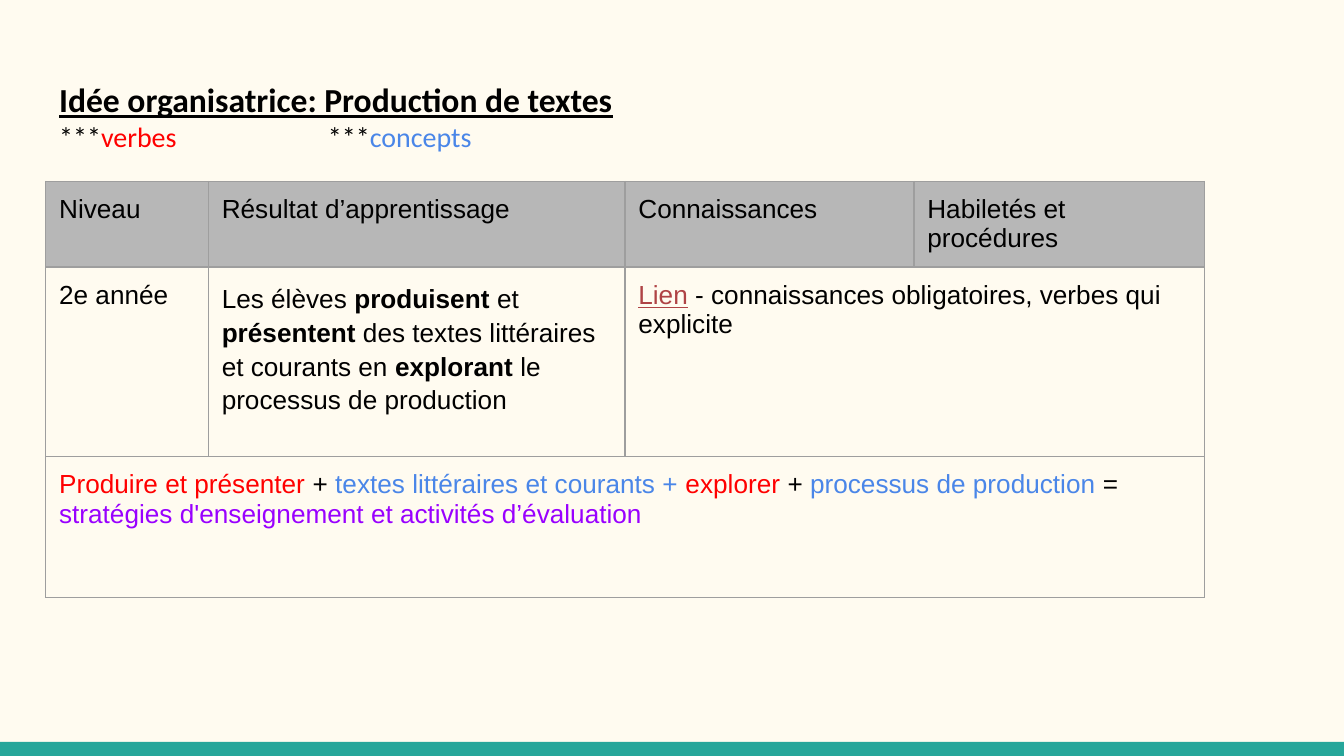
from lxml import etree
from pptx import Presentation
from pptx import util as u
from pptx.dml import color
from pptx.enum import shapes, text
from pptx.oxml import ns

BLACK, RED, BLUE, PURPLE = "000000", "FF0000", "4A86E8", "9900FF"
LINK, GREY, TEAL, CREAM, BORDER = "AF4345", "B7B7B7", "26A69A", "FFFBF0", "9E9E9E"
COLUMN_WIDTHS = [1.21, 3.1, 2.15, 2.16]
ROW_HEIGHTS = [0.54, 1.41, 1.05]
HEADERS = ["Niveau", "Résultat d’apprentissage", "Connaissances", "Habiletés et procédures"]
OUTCOME = [
    ("Les élèves ", False),
    ("produisent", True),
    (" et ", False),
    ("présentent", True),
    (" des textes littéraires et courants en ", False),
    ("explorant", True),
    (" le processus de production", False),
]
SUMMARY = [
    ("Produire et présenter", RED),
    (" + ", BLACK),
    ("textes littéraires et courants +", BLUE),
    (" explorer ", RED),
    ("+ ", BLACK),
    ("processus de production", BLUE),
    (" = ", BLACK),
    ("stratégies d'enseignement et activités d’évaluation", PURPLE),
]


def rgb(value):
    return color.RGBColor.from_string(value)


def paint(fill, value):
    fill.solid()
    fill.fore_color.rgb = rgb(value)


def add_text(paragraph, content, size=14, font="Arial", ink=BLACK, bold=False, underline=False):
    run = paragraph.add_run()
    run.text = content
    run.font.size = u.Pt(size)
    run.font.name = font
    run.font.color.rgb = rgb(ink)
    run.font.bold = bold
    run.font.underline = underline


def set_borders(cell):
    properties = cell._tc.get_or_add_tcPr()
    for position, side in enumerate(("lnL", "lnR", "lnT", "lnB")):
        line = etree.Element(ns.qn(f"a:{side}"), w=str(u.Pt(0.75)))
        fill = etree.SubElement(line, ns.qn("a:solidFill"))
        etree.SubElement(fill, ns.qn("a:srgbClr"), val=BORDER)
        properties.insert(position, line)


def format_cell(cell, fill):
    cell.margin_left = cell.margin_right = u.Inches(0.1)
    cell.margin_top = cell.margin_bottom = u.Inches(0.1)
    if fill:
        paint(cell.fill, fill)
    else:
        cell.fill.background()
    set_borders(cell)


def add_band(slide):
    band = slide.shapes.add_shape(
        shapes.MSO_SHAPE.RECTANGLE, 0, u.Inches(5.52), u.Inches(10), u.Inches(0.11))
    band.shadow.inherit = False
    paint(band.fill, TEAL)
    band.line.fill.background()


def fill_title(slide):
    title = slide.shapes.title
    title.left, title.top = u.Inches(0.34), u.Inches(0.49)
    title.width, title.height = u.Inches(9.32), u.Inches(0.67)
    frame = title.text_frame
    frame.word_wrap = True
    frame.auto_size = text.MSO_AUTO_SIZE.NONE
    frame.vertical_anchor = text.MSO_ANCHOR.TOP
    frame.margin_left = frame.margin_right = u.Inches(0.1)
    frame.margin_top = frame.margin_bottom = u.Inches(0.1)
    heading, legend = frame.paragraphs[0], frame.add_paragraph()
    for paragraph in (heading, legend):
        paragraph.alignment = text.PP_ALIGN.LEFT
        paragraph.line_spacing = 1.0
        paragraph.space_before = paragraph.space_after = u.Pt(0)
    add_text(heading, "Idée organisatrice: Production de textes",
             size=18, font="Calibri", bold=True, underline=True)
    for content, ink in (("***", BLACK), ("verbes", RED), ("\t\t***", BLACK), ("concepts", BLUE)):
        add_text(legend, content, size=15, font="Calibri", ink=ink)
    set_tab_stops(legend, (1, 2))


def set_tab_stops(paragraph, positions):
    properties = paragraph._p.get_or_add_pPr()
    stops = etree.SubElement(properties, ns.qn("a:tabLst"))
    for position in positions:
        etree.SubElement(stops, ns.qn("a:tab"), pos=str(u.Inches(position)), algn="l")


def add_outcome_table(slide):
    frame = slide.shapes.add_table(
        len(ROW_HEIGHTS), len(COLUMN_WIDTHS), u.Inches(0.34), u.Inches(1.35),
        u.Inches(sum(COLUMN_WIDTHS)), u.Inches(sum(ROW_HEIGHTS)))
    table = frame.table
    table.first_row = table.horz_banding = False
    for column, width in zip(table.columns, COLUMN_WIDTHS):
        column.width = u.Inches(width)
    for index, height in enumerate(ROW_HEIGHTS):
        table.rows[index].height = u.Inches(height)
        for cell in table.rows[index].cells:
            format_cell(cell, GREY if index == 0 else None)
    table.cell(1, 2).merge(table.cell(1, 3))
    table.cell(2, 0).merge(table.cell(2, 3))
    return table


def fill_table(table):
    def paragraph_at(row, column):
        return table.cell(row, column).text_frame.paragraphs[0]

    for column, header in enumerate(HEADERS):
        add_text(paragraph_at(0, column), header)
    add_text(paragraph_at(1, 0), "2e année")
    outcome = paragraph_at(1, 1)
    outcome.line_spacing = 1.15
    for content, bold in OUTCOME:
        add_text(outcome, content, bold=bold)
    knowledge = paragraph_at(1, 2)
    add_text(knowledge, "Lien", ink=LINK, underline=True)
    add_text(knowledge, " - connaissances obligatoires, verbes qui explicite")
    for content, ink in SUMMARY:
        add_text(paragraph_at(2, 0), content, ink=ink)


def main():
    presentation = Presentation()
    presentation.slide_width = u.Inches(10)
    presentation.slide_height = u.Inches(10 * 9 / 16)
    slide = presentation.slides.add_slide(presentation.slide_layouts[5])
    paint(slide.background.fill, CREAM)
    add_band(slide)
    fill_title(slide)
    fill_table(add_outcome_table(slide))
    presentation.save("out.pptx")


if __name__ == "__main__":
    main()
